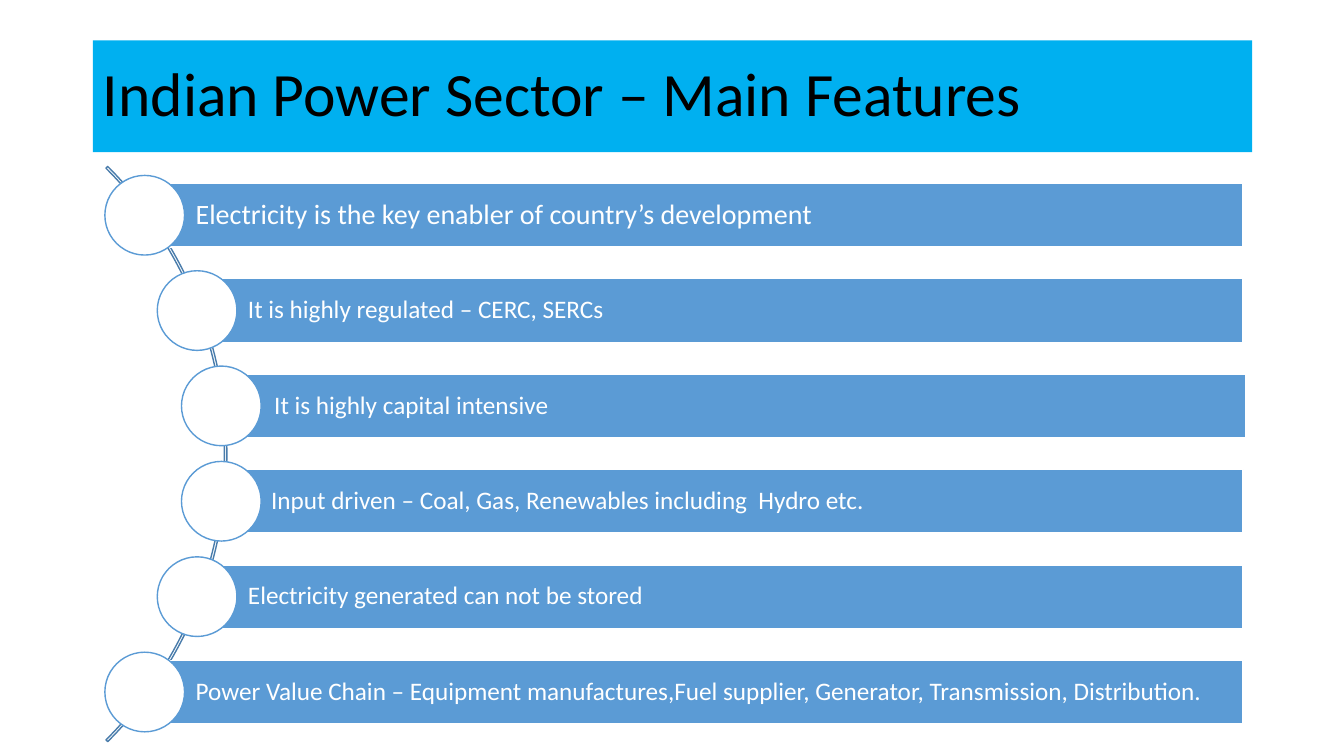
import pptx
import pptx.util
import pptx.dml.color
import pptx.enum.shapes
import pptx.enum.text
from dataclasses import dataclass

Inches = pptx.util.Inches
Pt = pptx.util.Pt
RGB = pptx.dml.color.RGBColor.from_string
SHAPES = pptx.enum.shapes.MSO_SHAPE


@dataclass(frozen=True)
class Theme:
    font: str = "Calibri"
    banner: str = "00B0F0"
    bar: str = "5B9BD5"
    arc: str = "497CAB"
    light: str = "FFFFFF"
    dark: str = "000000"
    title_size: int = 44
    lead_size: int = 20
    feature_size: int = 18


theme = Theme()


def write(shape, text, *, size, color, left=0.1, margin=0.05):
    """Put one left-aligned, vertically centred line of text into a shape."""
    frame = shape.text_frame
    frame.word_wrap = True
    frame.auto_size = pptx.enum.text.MSO_AUTO_SIZE.NONE
    frame.vertical_anchor = pptx.enum.text.MSO_ANCHOR.MIDDLE
    frame.margin_left = Inches(left)
    frame.margin_top = frame.margin_right = frame.margin_bottom = Inches(margin)
    paragraph = frame.paragraphs[0]
    paragraph.alignment = pptx.enum.text.PP_ALIGN.LEFT
    paragraph.line_spacing = 0.9
    run = paragraph.add_run()
    run.text = text
    run.font.name = theme.font
    run.font.size = Pt(size)
    run.font.color.rgb = RGB(color)


def add_outlined(kind, left, top, width, height, *, fill, line):
    shape = slide.shapes.add_shape(
        kind, Inches(left), Inches(top), Inches(width), Inches(height))
    shape.shadow.inherit = False
    if fill:
        shape.fill.solid()
        shape.fill.fore_color.rgb = RGB(fill)
    else:
        shape.fill.background()
    shape.line.color.rgb = RGB(line)
    shape.line.width = Pt(1)
    return shape


deck = pptx.Presentation()
deck.slide_width, deck.slide_height = Inches(13.33), Inches(7.5)
slide = deck.slides.add_slide(deck.slide_layouts.get_by_name("Title Only"))

heading = slide.shapes.title
heading.left, heading.top = Inches(0.92), Inches(0.4)
heading.width, heading.height = Inches(11.5), Inches(1.11)
heading.fill.solid()
heading.fill.fore_color.rgb = RGB(theme.banner)
write(heading, "Indian Power Sector – Main Features",
      size=theme.title_size, color=theme.dark)

spine = add_outlined(SHAPES.BLOCK_ARC, -5.82, 0.47, 8.07, 8.07,
                     fill=None, line=theme.arc)
for index, value in enumerate((189, 27, 0.003)):
    spine.adjustments[index] = value

# Feature text, bar left edge, text size
features = [
    ("Electricity is the key enabler of country’s development", 1.44, theme.lead_size),
    ("It is highly regulated – CERC, SERCs", 1.96, theme.feature_size),
    ("It is highly capital intensive", 2.22, theme.feature_size),
    ("Input driven – Coal, Gas, Renewables including  Hydro etc.", 2.19, theme.feature_size),
    ("Electricity generated can not be stored", 1.96, theme.feature_size),
    ("Power Value Chain – Equipment manufactures,Fuel supplier, Generator, "
     "Transmission, Distribution.", 1.44, theme.feature_size),
]
node_lefts = [1.04, 1.56, 1.8]
node_lefts += reversed(node_lefts)
bar_widths = [10.89, 10.37, 10.14]
bar_widths += reversed(bar_widths)
first_top, last_top = 1.82, 6.55
pitch = (last_top - first_top) / (len(features) - 1)
bar_height, node_size = 0.63, 0.79

for row, (text, bar_left, size) in enumerate(features):
    top = first_top + row * pitch
    bar = add_outlined(SHAPES.RECTANGLE, bar_left, top, bar_widths[row], bar_height,
                       fill=theme.bar, line=theme.light)
    write(bar, text, size=size, color=theme.light, left=0.5)
    add_outlined(SHAPES.OVAL, node_lefts[row], top - (node_size - bar_height) / 2,
                 node_size, node_size, fill=theme.light, line=theme.bar)

deck.save("out.pptx")
